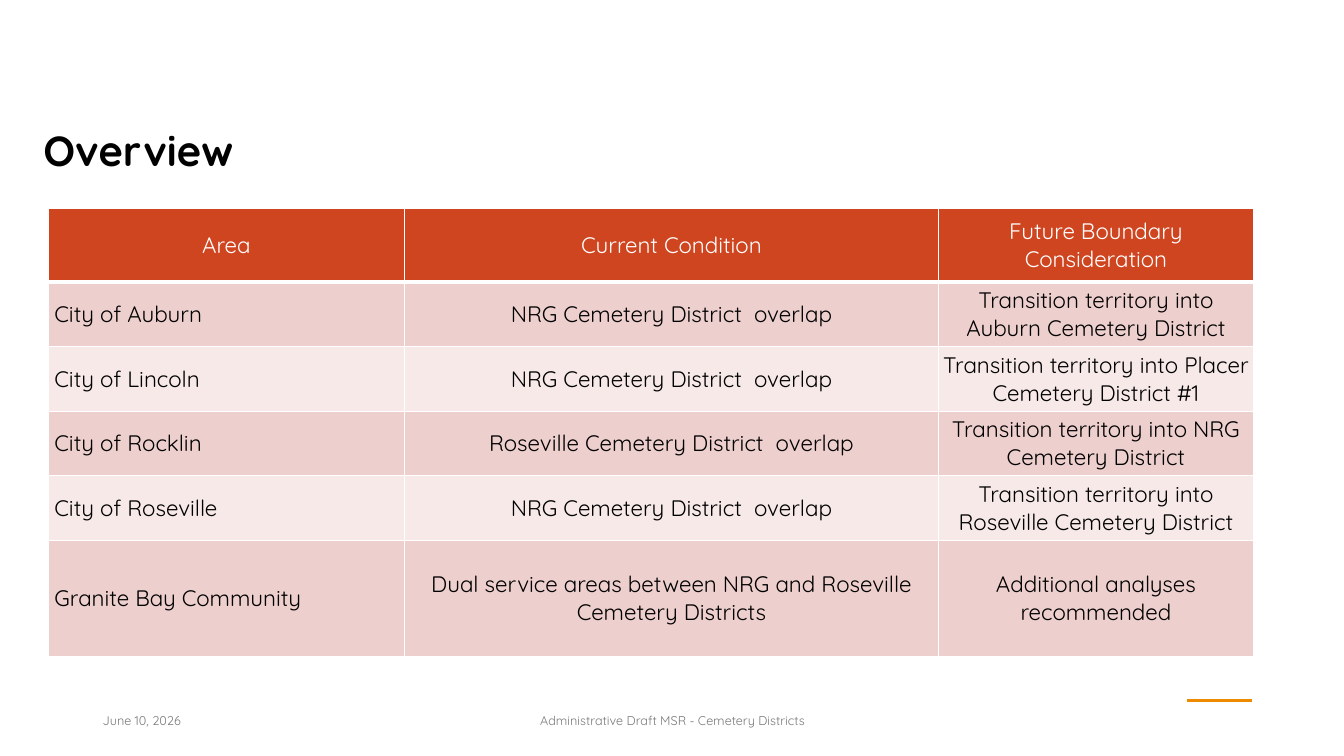
from dataclasses import dataclass

from lxml.etree import SubElement as Sub
from pptx import Presentation
from pptx.dml.color import RGBColor as RGB
from pptx.enum.shapes import MSO_CONNECTOR as Conn
from pptx.enum.text import MSO_ANCHOR as Anchor, PP_ALIGN as Align
from pptx.oxml.ns import qn
from pptx.util import Inches, Pt

FONT = "Quicksand"
COLORS = {
    "black": "000000",
    "white": "FFFFFF",
    "grey": "797979",
    "head": "CF4520",
    "dark": "EDCFCD",
    "light": "F6E9E8",
    "gold": "ED8B00",
}
WIDTHS = (3.53, 5.3, 3.12)


@dataclass(frozen=True)
class Row:
    area: str
    now: str
    plan: str
    height: float = 0.64


@dataclass(frozen=True)
class Note:
    text: str
    left: float
    width: float
    align: Align


ROWS = (
    Row("Area", "Current Condition", "Future Boundary Consideration", 0.73),
    Row("City of Auburn", "NRG Cemetery District  overlap",
        "Transition territory into Auburn Cemetery District"),
    Row("City of Lincoln", "NRG Cemetery District  overlap",
        "Transition territory into Placer Cemetery District #1"),
    Row("City of Rocklin", "Roseville Cemetery District  overlap",
        "Transition territory into NRG Cemetery District"),
    Row("City of Roseville", "NRG Cemetery District  overlap",
        "Transition territory into Roseville Cemetery District"),
    Row("Granite Bay Community",
        "Dual service areas between NRG and Roseville Cemetery Districts",
        "Additional analyses recommended", 1.15),
)
NOTES = (
    Note("June 10, 2026", 0.92, 3, Align.LEFT),
    Note("Administrative Draft MSR - Cemetery Districts", 4.42, 4.5, Align.CENTER),
)


def tint(name: str) -> RGB:
    return RGB.from_string(COLORS[name])


def write(frame, text: str, size: float, color: str, align: Align, bold: bool = False) -> None:
    frame.word_wrap = True
    para = frame.paragraphs[0]
    para.alignment = align
    run = para.add_run()
    run.text = text
    run.font.name = FONT
    run.font.size = Pt(size)
    run.font.bold = bold
    run.font.color.rgb = tint(color)


def edge(cell, tag: str, width: float) -> None:
    line = Sub(cell._tc.get_or_add_tcPr(), qn(f"a:{tag}"), w=str(Pt(width)))
    fill = Sub(line, qn("a:solidFill"))
    Sub(fill, qn("a:srgbClr"), val=COLORS["white"])


def draw_cell(cell, text: str, row: int, col: int) -> None:
    head = row == 0
    left = col == 0 and not head
    for tag in ("lnL", "lnR", "lnT", "lnB"):
        thick = (head and tag == "lnB") or (row == 1 and tag == "lnT")
        edge(cell, tag, 3 if thick else 1)
    cell.fill.solid()
    cell.fill.fore_color.rgb = tint("head" if head else "dark" if row % 2 else "light")
    cell.vertical_anchor = Anchor.MIDDLE
    cell.margin_left = Inches(0.06 if left else 0)
    cell.margin_right = cell.margin_top = cell.margin_bottom = Inches(0)
    write(cell.text_frame, text, 16, "white" if head else "black",
          Align.LEFT if left else Align.CENTER)


def draw_table(slide) -> None:
    high = sum(row.height for row in ROWS)
    table = slide.shapes.add_table(len(ROWS), len(WIDTHS), Inches(0.48), Inches(2.07),
                                   Inches(sum(WIDTHS)), Inches(high)).table
    for col, width in zip(table.columns, WIDTHS):
        col.width = Inches(width)
    for r, row in enumerate(ROWS):
        table.rows[r].height = Inches(row.height)
        for c, text in enumerate((row.area, row.now, row.plan)):
            draw_cell(table.cell(r, c), text, r, c)


def draw_title(slide) -> None:
    title = slide.shapes.title
    title.left, title.top = Inches(0.33), Inches(0.97)
    title.width, title.height = Inches(11.5), Inches(1.1)
    frame = title.text_frame
    frame.vertical_anchor = Anchor.MIDDLE
    write(frame, "Overview", 30, "black", Align.LEFT, True)
    frame.paragraphs[0].line_spacing = 0.9


def draw_note(slide, note: Note) -> None:
    box = slide.shapes.add_textbox(Inches(note.left), Inches(6.95),
                                   Inches(note.width), Inches(0.4))
    box.text_frame.vertical_anchor = Anchor.MIDDLE
    write(box.text_frame, note.text, 9, "grey", note.align)


def draw_rule(slide) -> None:
    rule = slide.shapes.add_connector(Conn.STRAIGHT, Inches(12.42), Inches(6.95),
                                      Inches(11.77), Inches(6.95))
    rule.line.color.rgb = tint("gold")
    rule.line.width = Pt(2.5)
    Sub(rule._element.spPr, qn("a:effectLst"))


def main() -> None:
    deck = Presentation()
    deck.slide_width, deck.slide_height = Inches(13.33), Inches(7.5)
    slide = deck.slides.add_slide(deck.slide_layouts[5])
    draw_rule(slide)
    draw_title(slide)
    draw_table(slide)
    for note in NOTES:
        draw_note(slide, note)
    deck.save("out.pptx")


if __name__ == "__main__":
    main()
